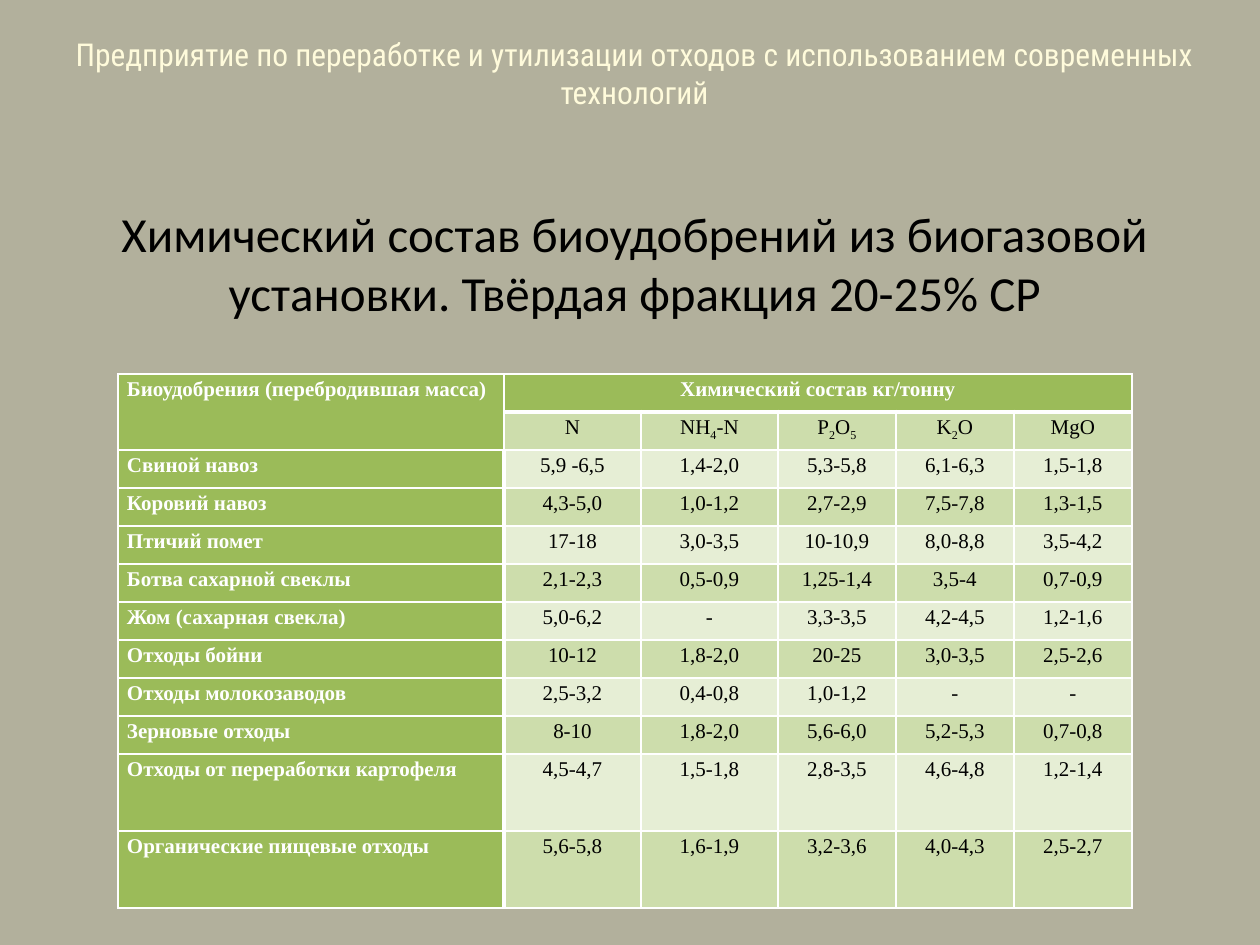
from dataclasses import dataclass
from itertools import groupby

from lxml import etree
from pptx import Presentation
from pptx import util as u
from pptx.dml.color import RGBColor
from pptx.enum import text
from pptx.oxml.ns import qn


@dataclass(frozen=True)
class Theme:
    background: str = "B2B09C"
    cream: str = "FFFBDB"
    white: str = "FFFFFF"
    black: str = "000000"
    header_green: str = "9BBB59"
    dark_band: str = "CDDDAC"
    light_band: str = "E6EED5"
    project_font: str = "Roboto Condensed"
    heading_font: str = "Calibri"
    table_font: str = "Times New Roman"
    project_size: int = 18
    heading_size: int = 28
    table_size: int = 12
    thin: int = 1
    thick: int = 3


THEME = Theme()
CENTER = text.PP_ALIGN.CENTER
JUSTIFY = text.PP_ALIGN.JUSTIFY

PROJECT = "Предприятие по переработке и утилизации отходов с использованием современных технологий"
HEADING = "Химический состав биоудобрений из биогазовой установки. Твёрдая фракция 20-25% СР"
SOURCE_HEADER = "Биоудобрения (перебродившая масса)"
CONTENT_HEADER = "Химический состав кг/тонну"
FORMULAS = ["N", "NH4-N", "P2O5", "K2O", "MgO"]
FERTILIZERS = [
    ("Свиной навоз", "5,9 -6,5", "1,4-2,0", "5,3-5,8", "6,1-6,3", "1,5-1,8"),
    ("Коровий навоз", "4,3-5,0", "1,0-1,2", "2,7-2,9", "7,5-7,8", "1,3-1,5"),
    ("Птичий помет", "17-18", "3,0-3,5", "10-10,9", "8,0-8,8", "3,5-4,2"),
    ("Ботва сахарной свеклы", "2,1-2,3", "0,5-0,9", "1,25-1,4", "3,5-4", "0,7-0,9"),
    ("Жом (сахарная свекла)", "5,0-6,2", "-", "3,3-3,5", "4,2-4,5", "1,2-1,6"),
    ("Отходы бойни", "10-12", "1,8-2,0", "20-25", "3,0-3,5", "2,5-2,6"),
    ("Отходы молокозаводов", "2,5-3,2", "0,4-0,8", "1,0-1,2", "-", "-"),
    ("Зерновые отходы", "8-10", "1,8-2,0", "5,6-6,0", "5,2-5,3", "0,7-0,8"),
    ("Отходы от переработки картофеля", "4,5-4,7", "1,5-1,8", "2,8-3,5", "4,6-4,8", "1,2-1,4"),
    ("Органические пищевые отходы", "5,6-5,8", "1,6-1,9", "3,2-3,6", "4,0-4,3", "2,5-2,7"),
]
COLUMN_WIDTHS = [386, 137, 137, 118, 118, 118]
ROW_HEIGHTS = [38] * 10 + [77] * 2


def px(length):
    return u.Emu(round(length * 914400 / 126))


def style_font(font, name, size, color, bold=False):
    font.name = name
    font.size = u.Pt(size)
    font.bold = bold
    font.color.rgb = RGBColor.from_string(color)


def add_title(slide, top, height, wording, font_name, size, color):
    frame = slide.shapes.add_textbox(px(39), px(top), px(1191), px(height)).text_frame
    frame.word_wrap = True
    frame.text = wording
    paragraph = frame.paragraphs[0]
    paragraph.alignment = CENTER
    style_font(paragraph.runs[0].font, font_name, size, color)


def set_borders(cell, **widths):
    """Draw white borders; widths overrides the thin default by side (L, R, T, B)."""
    properties = cell._tc.get_or_add_tcPr()
    for position, side in enumerate("LRTB"):
        width = widths.get(side, THEME.thin)
        line = etree.Element(qn(f"a:ln{side}"), w=str(u.Pt(width)))
        paint = etree.SubElement(line, qn("a:solidFill"))
        etree.SubElement(paint, qn("a:srgbClr"), val=THEME.white)
        properties.insert(position, line)


def fill_cell(cell, fill, **widths):
    cell.fill.solid()
    cell.fill.fore_color.rgb = RGBColor.from_string(fill)
    cell.margin_left = cell.margin_right = px(9)
    cell.margin_top = cell.margin_bottom = 0
    set_borders(cell, **widths)


def write_cell(cell, wording, alignment, color, bold=False, formula=False):
    """Write one paragraph; in a formula the digits become subscripts."""
    paragraph = cell.text_frame.paragraphs[0]
    paragraph.alignment = alignment
    paragraph.line_spacing = 1.15
    paragraph.space_after = u.Pt(10)
    for is_digit, letters in groupby(wording, lambda letter: formula and letter.isdigit()):
        run = paragraph.add_run()
        run.text = "".join(letters)
        style_font(run.font, THEME.table_font, THEME.table_size, color, bold)
        if is_digit:
            run._r.get_or_add_rPr().set("baseline", "-25000")


def add_headers(table):
    for column in range(len(COLUMN_WIDTHS)):
        content = column > 0
        fill_cell(table.cell(0, column), THEME.header_green,
                  B=THEME.thick if content else THEME.thin)
        fill_cell(table.cell(1, column), THEME.dark_band if content else THEME.header_green,
                  T=THEME.thick if content else THEME.thin)
    table.cell(0, 0).merge(table.cell(1, 0))
    table.cell(0, 1).merge(table.cell(0, len(FORMULAS)))
    write_cell(table.cell(0, 0), SOURCE_HEADER, JUSTIFY, THEME.white, bold=True)
    write_cell(table.cell(0, 1), CONTENT_HEADER, CENTER, THEME.white, bold=True)
    for column, formula in enumerate(FORMULAS, 1):
        write_cell(table.cell(1, column), formula, CENTER, THEME.black, formula=True)


def add_fertilizer(table, row, source, amounts):
    label = table.cell(row, 0)
    fill_cell(label, THEME.header_green, R=THEME.thick)
    write_cell(label, source, JUSTIFY, THEME.white, bold=True)
    band = THEME.dark_band if row % 2 else THEME.light_band
    for column, amount in enumerate(amounts, 1):
        cell = table.cell(row, column)
        fill_cell(cell, band, L=THEME.thick if column == 1 else THEME.thin)
        write_cell(cell, amount, CENTER, THEME.black)


def add_composition_table(slide):
    table = slide.shapes.add_table(
        len(ROW_HEIGHTS), len(COLUMN_WIDTHS), px(118), px(374),
        px(sum(COLUMN_WIDTHS)), px(sum(ROW_HEIGHTS))).table
    for column, width in zip(table.columns, COLUMN_WIDTHS):
        column.width = px(width)
    for row, height in zip(table.rows, ROW_HEIGHTS):
        row.height = px(height)
    add_headers(table)
    for row, (source, *amounts) in enumerate(FERTILIZERS, 2):
        add_fertilizer(table, row, source, amounts)


def main():
    presentation = Presentation()
    presentation.slide_width, presentation.slide_height = px(1260), px(945)
    slide = presentation.slides.add_slide(presentation.slide_layouts[6])
    slide.background.fill.solid()
    slide.background.fill.fore_color.rgb = RGBColor.from_string(THEME.background)
    add_title(slide, 29, 129, PROJECT, THEME.project_font, THEME.project_size, THEME.cream)
    add_composition_table(slide)
    add_title(slide, 197, 147, HEADING, THEME.heading_font, THEME.heading_size, THEME.black)
    presentation.save("out.pptx")


if __name__ == "__main__":
    main()
